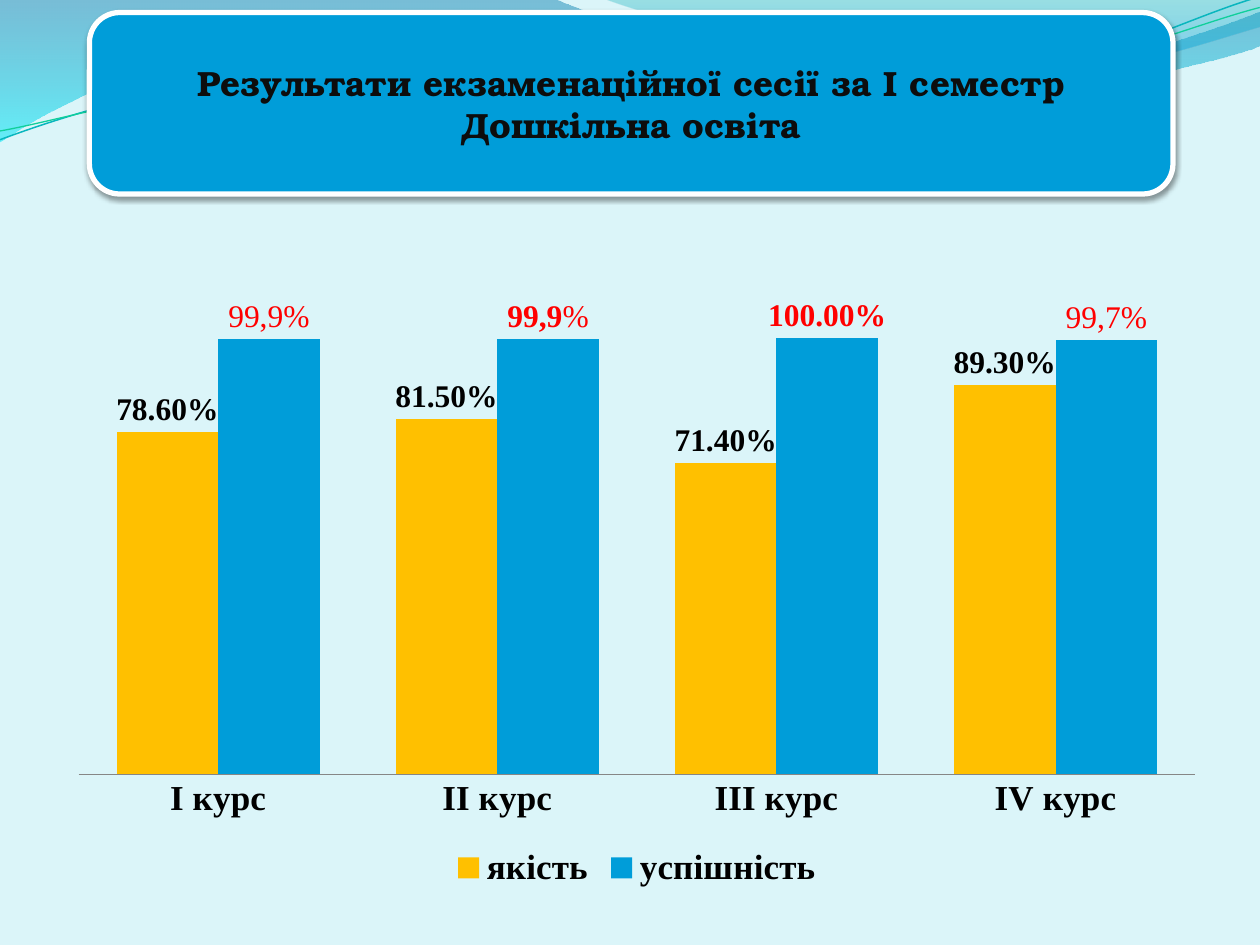
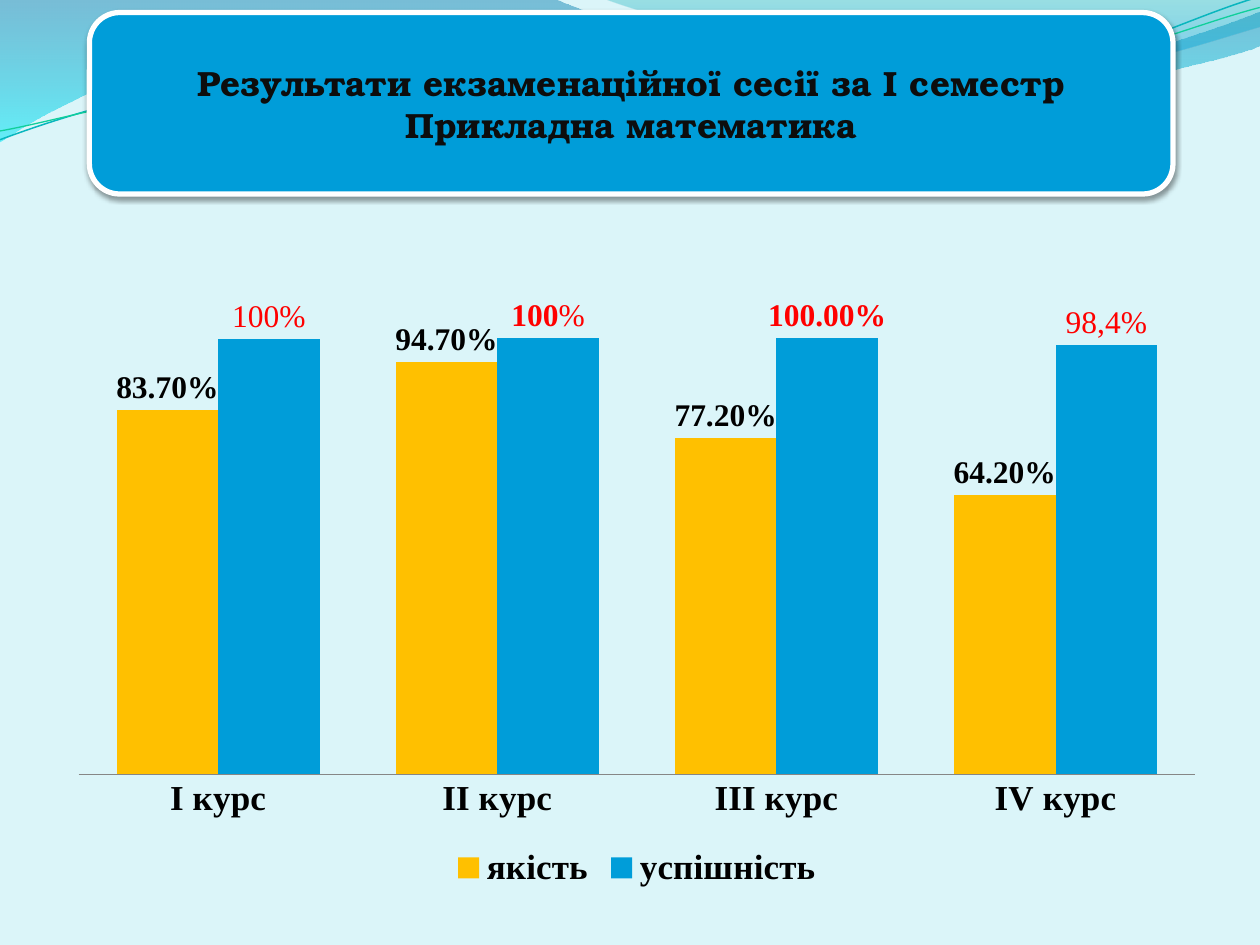
from math import cos, radians, sin

from pptx import Presentation
from pptx.chart.data import CategoryChartData
from pptx.dml.color import RGBColor
from pptx.enum.chart import (XL_CHART_TYPE, XL_LABEL_POSITION, XL_LEGEND_POSITION,
                             XL_TICK_MARK)
from pptx.enum.shapes import MSO_SHAPE
from pptx.enum.text import MSO_ANCHOR, PP_ALIGN
from pptx.oxml import parse_xml
from pptx.oxml.ns import nsdecls, qn
from pptx.util import Inches, Pt

HEADING = "Результати екзаменаційної сесії за І семестр"
COURSES = ["І курс", "ІІ курс", "ІІІ курс", "IV курс"]
QUALITY, SUCCESS = "якість", "успішність"

# Each success note is keyed by course index and holds (text, bold) pieces.
RESULTS = [
    {
        "specialty": "Дошкільна освіта",
        QUALITY: [0.786, 0.815, 0.714, 0.893],
        SUCCESS: [0.999, 0.999, 1, 0.997],
        "notes": {0: [("99,9%", False)], 1: [("99,9", True), ("%", False)],
                  3: [("99,7%", False)]},
    },
    {
        "specialty": "Прикладна математика",
        QUALITY: [0.837, 0.947, 0.772, 0.642],
        SUCCESS: [0.999, 1, 1, 0.984],
        "notes": {0: [("100%", False)], 1: [("100", True), ("%", False)],
                  3: [("98,4%", False)]},
    },
]

COLORS = {
    "background": "DBF5F9", "banner": "009DD9", "border": "FFFFFF", "heading": "0D0D0D",
    "text": "000000", "note": "FF0000", "axis": "868686",
    QUALITY: "FFC000", SUCCESS: "009DD9",
}

SERIF = "Times New Roman"
FONTS = {
    "heading": {"name": "TeX Gyre Bonum", "size": Pt(20), "bold": True},
    "chart": {"name": "Arial", "size": Pt(18)},
    "axis": {"name": SERIF, "size": Pt(20), "bold": True},
    "label": {"name": SERIF, "size": Pt(18), "bold": True},
}

# Outlines in inches: a start, then 1-point lines and 3-point Bezier curves.
# Gradient stops are (position %, colour, opacity %).
WAVES = [
    {"start": (0, 0),
     "steps": [[(4.4, -0.01)],
               [(4.76, 0.17), (6.64, 0.63), (7.58, 0.63)],
               [(8.53, 0.63), (9.58, 0.26), (10, 0.09)],
               [(10.01, 0.36)],
               [(9.83, 0.44), (8.7, 0.76), (7.46, 0.75)],
               [(6.22, 0.75), (3.82, 0.28), (2.57, 0.34)],
               [(1.29, 0.36), (0.46, 0.83), (-0.01, 1.13)],
               [(0, 0)]],
     "gradient": [(0, "0079AD", 45), (100, "00E9F7", 55)]},
    {"start": (4.79, -0.01),
     "steps": [[(5.09, 0.11), (6.82, 0.62), (7.69, 0.65)],
               [(8.56, 0.69), (9.61, 0.32), (10, 0.21)],
               [(10, 0)],
               [(4.79, -0.01)]],
     "gradient": [(0, "00ABB4", 30), (80, "0099E4", 45), (100, "0099E4", 45)]},
    {"start": (0, 1.11),
     "steps": [[(0.48, 0.93), (1.58, 0.57), (2.77, 0.52)],
               [(3.95, 0.47), (5.93, 0.89), (7.13, 0.8)],
               [(8.33, 0.71), (9.38, 0.15), (9.98, -0.02)]],
     "line": ("09B6BE", 0.85), "tilt": 357.3},
    {"start": (0, 1.04),
     "steps": [[(0.47, 0.96), (1.64, 0.61), (2.83, 0.56)],
               [(4.03, 0.51), (5.97, 0.84), (7.17, 0.75)],
               [(8.36, 0.67), (9.41, 0.21), (10, 0.06)]],
     "line": ("10CF9B", 0.75), "tilt": 357.3},
]
FIRST_WAVE_ID = 101


def rgb(key):
    return RGBColor.from_string(COLORS.get(key, key))


def style_font(font, style, color, **changes):
    for attribute, value in {**FONTS[style], **changes}.items():
        setattr(font, attribute, value)
    font.color.rgb = rgb(color)


def paint(fill, color):
    fill.solid()
    fill.fore_color.rgb = rgb(color)


def untilt(points, tilt):
    """Turn points back by the tilt, around the middle between both ends."""
    (x0, y0), (x1, y1) = points[0], points[-1]
    middle_x, middle_y = (x0 + x1) / 2, (y0 + y1) / 2
    c, s = cos(radians(-tilt)), sin(radians(-tilt))
    return [(middle_x + (x - middle_x) * c - (y - middle_y) * s,
             middle_y + (x - middle_x) * s + (y - middle_y) * c) for x, y in points]


def bend(shape, steps):
    """Join the three line segments of each curved step into one Bezier curve."""
    segments = iter(list(shape.element.iter(qn("a:lnTo"))))
    for step in steps:
        parts = [next(segments) for _ in step]
        if len(step) == 3:
            curve = parse_xml(f'<a:cubicBezTo {nsdecls("a")}/>')
            parts[0].addprevious(curve)
            for part in parts:
                curve.append(part[0])
                part.getparent().remove(part)


def set_gradient(shape, stops):
    """Fill from top to bottom with partly transparent colours."""
    stops_xml = "".join(
        f'<a:gs pos="{position * 1000}"><a:srgbClr val="{color}">'
        f'<a:alpha val="{opacity * 1000}"/></a:srgbClr></a:gs>'
        for position, color, opacity in stops)
    gradient = parse_xml(
        f'<a:gradFill {nsdecls("a")} rotWithShape="1"><a:gsLst>{stops_xml}</a:gsLst>'
        '<a:lin ang="5400000" scaled="0"/></a:gradFill>')
    properties = shape.element.spPr
    properties.replace(properties.find(qn("a:noFill")), gradient)


def add_waves(slide, master):
    """Draw the waves with the slide's builder, then move them to the master."""
    for wave_id, wave in enumerate(WAVES, FIRST_WAVE_ID):
        points = [wave["start"]] + [point for step in wave["steps"] for point in step]
        tilt = wave.get("tilt", 0)
        points = [(Inches(x), Inches(y)) for x, y in untilt(points, tilt)]
        builder = slide.shapes.build_freeform(*points[0])
        builder.add_line_segments(points[1:], close="gradient" in wave)
        shape = builder.convert_to_shape()
        bend(shape, wave["steps"])
        shape.rotation = tilt
        shape.shadow.inherit = False
        shape.fill.background()
        if "gradient" in wave:
            set_gradient(shape, wave["gradient"])
            shape.line.fill.background()
        else:
            color, width = wave["line"]
            shape.line.color.rgb = rgb(color)
            shape.line.width = Pt(width)
        shape.element.nvSpPr.cNvPr.set("id", str(wave_id))
        master.shapes.element.append(shape.element)


def add_banner(slide, specialty):
    banner = slide.shapes.add_shape(MSO_SHAPE.ROUNDED_RECTANGLE, Inches(0.71), Inches(0.1),
                                    Inches(8.6), Inches(1.44))
    paint(banner.fill, "banner")
    banner.line.color.rgb = rgb("border")
    banner.line.width = Pt(3)
    banner.shadow.inherit = False
    banner.element.spPr.find(qn("a:effectLst")).append(parse_xml(
        f'<a:outerShdw {nsdecls("a")} blurRad="{Pt(3.1)}" dist="{Pt(1.6)}" dir="5400000" '
        'rotWithShape="0"><a:srgbClr val="000000"><a:alpha val="38000"/></a:srgbClr>'
        '</a:outerShdw>'))
    frame = banner.text_frame
    frame.word_wrap = True
    frame.vertical_anchor = MSO_ANCHOR.MIDDLE
    paragraph = frame.paragraphs[0]
    paragraph.alignment = PP_ALIGN.CENTER
    paragraph.text = f"{HEADING}\v{specialty}"
    for run in paragraph.runs:
        style_font(run.font, "heading", "heading")


def add_results_chart(slide, result):
    data = CategoryChartData(number_format="0.00%")
    data.categories = COURSES
    for name in (QUALITY, SUCCESS):
        data.add_series(name, result[name])
    chart = slide.shapes.add_chart(XL_CHART_TYPE.COLUMN_CLUSTERED, Inches(0.44), Inches(1.89),
                                   Inches(9.23), Inches(5.21), data).chart
    style_font(chart.font, "chart", "text")
    chart.has_title = False
    chart.has_legend = True
    chart.legend.position = XL_LEGEND_POSITION.BOTTOM
    chart.legend.include_in_layout = False
    style_font(chart.legend.font, "axis", "text")

    courses, shares = chart.category_axis, chart.value_axis
    courses.major_tick_mark = XL_TICK_MARK.NONE
    courses.format.line.color.rgb = rgb("axis")
    courses.format.line.width = Pt(0.75)
    style_font(courses.tick_labels.font, "axis", "text")
    shares.minimum_scale, shares.maximum_scale = 0, 1.2
    shares.has_major_gridlines = False
    shares.visible = False

    plot = chart.plots[0]
    plot.gap_width, plot.overlap = 75, 0
    plot.vary_by_categories = False
    for series, label_color in zip(plot.series, ("text", "note")):
        paint(series.format.fill, series.name)
        labels = series.data_labels
        labels.show_value = True
        labels.number_format = "0.00%"
        labels.number_format_is_linked = False
        labels.position = XL_LABEL_POSITION.OUTSIDE_END
        style_font(labels.font, "label", label_color)

    for course, pieces in result["notes"].items():
        note = plot.series[1].points[course].data_label
        paragraph = note.text_frame.paragraphs[0]
        for text, bold in pieces:
            run = paragraph.add_run()
            run.text = text
            style_font(run.font, "label", "note", bold=bold)
        note.position = XL_LABEL_POSITION.OUTSIDE_END


def main():
    presentation = Presentation()
    presentation.slide_width, presentation.slide_height = Inches(10), Inches(7.5)
    master = presentation.slide_master
    paint(master.background.fill, "background")
    slides = [presentation.slides.add_slide(presentation.slide_layouts[6]) for _ in RESULTS]
    add_waves(slides[0], master)
    for slide, result in zip(slides, RESULTS):
        add_results_chart(slide, result)
        add_banner(slide, result["specialty"])
    presentation.save("out.pptx")


if __name__ == "__main__":
    main()
